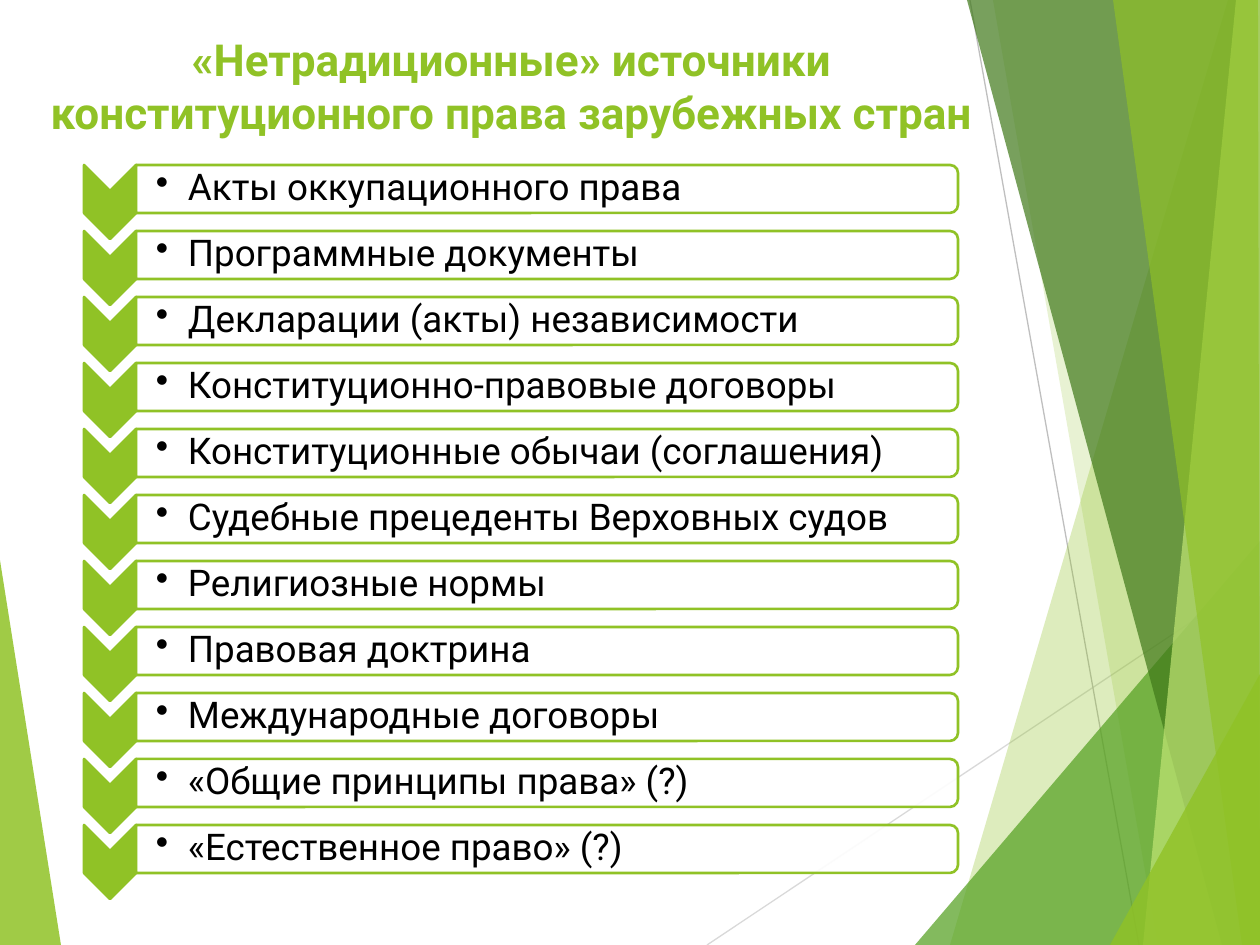
from lxml.etree import SubElement
from pptx import Presentation
from pptx.dml.color import RGBColor
from pptx.enum.shapes import MSO_CONNECTOR, MSO_SHAPE
from pptx.enum.text import MSO_ANCHOR, PP_ALIGN
from pptx.oxml.ns import qn
from pptx.util import Emu, Pt

SCALE = 914400 / 126
WIDTH, HEIGHT = 1260, 945
FONT = "Roboto"
GREEN = RGBColor(0x90, 0xC2, 0x26)
MID_GREEN = RGBColor(0x54, 0xA0, 0x21)
DARK_GREEN = RGBColor(0x3F, 0x78, 0x19)
PALE_GREEN = RGBColor(0xC0, 0xE4, 0x74)
LIGHT_GRAY = RGBColor(0xD9, 0xD9, 0xD9)
GRAY = RGBColor(0xBF, 0xBF, 0xBF)
WHITE = RGBColor(0xFF, 0xFF, 0xFF)
BLACK = RGBColor(0, 0, 0)


def px(*lengths):
    return [Emu(round(length * SCALE)) for length in lengths]


def paint(shape, color, opacity=100):
    shape.shadow.inherit = False
    shape.fill.solid()
    shape.fill.fore_color.rgb = color
    if opacity < 100:
        tint = shape.fill._xPr.find(".//" + qn("a:srgbClr"))
        SubElement(tint, qn("a:alpha"), val=str(opacity * 1000))


deck = Presentation()
deck.slide_width, deck.slide_height = px(WIDTH, HEIGHT)
page = deck.slides.add_slide(deck.slide_layouts[6])

# Thin background lines
for ends, color in [
    ((707, 945, 1260, 576), LIGHT_GRAY),
    ((970, 0, 1139, 945), GRAY),
]:
    line = page.shapes.add_connector(MSO_CONNECTOR.STRAIGHT, *px(*ends))
    line.line.color.rgb = color
    line.line.width = Pt(0.75)
    SubElement(line._element.spPr, qn("a:effectLst"))

# Translucent background facets
facets = [
    ([(0, 560), (61, 945), (0, 945)], GREEN, 85),
    ([(1228, 0), (950, 945), (1260, 945), (1260, 0)], GREEN, 30),
    ([(993, 0), (1158, 945), (1260, 945), (1260, 0)], GREEN, 20),
    ([(915, 945), (1260, 541), (1260, 945)], MID_GREEN, 72),
    ([(967, 0), (1222, 945), (1260, 945), (1260, 0)], DARK_GREEN, 70),
    ([(1236, 0), (1143, 945), (1260, 945), (1260, 0)], PALE_GREEN, 70),
    ([(1113, 0), (1242, 945), (1260, 945), (1258, 0)], GREEN, 65),
    ([(1110, 945), (1260, 674), (1260, 945)], GREEN, 80),
]
for points, color, opacity in facets:
    builder = page.shapes.build_freeform(*points[0], scale=SCALE)
    builder.add_line_segments(points[1:], close=True)
    facet = builder.convert_to_shape()
    paint(facet, color, opacity)
    facet.line.fill.background()

# Title
title = page.shapes.add_textbox(*px(25, 26, 973, 181))
title.text_frame.word_wrap = True
para = title.text_frame.paragraphs[0]
para.alignment = PP_ALIGN.CENTER
span = para.add_run()
span.text = "«Нетрадиционные» источники конституционного права зарубежных стран"
span.font.name, span.font.size, span.font.bold = FONT, Pt(25.2), True
span.font.color.rgb = GREEN

# Chevron list: one chevron, frame and bulleted label for each source of law
sources = [
    "Акты оккупационного права",
    "Программные документы",
    "Декларации (акты) независимости",
    "Конституционно-правовые договоры",
    "Конституционные обычаи (соглашения)",
    "Судебные прецеденты Верховных судов",
    "Религиозные нормы",
    "Правовая доктрина",
    "Международные договоры",
    "«Общие принципы права» (?)",
    "«Естественное право» (?)",
]
ROW_TOP, ROW_PITCH = 165, 66
for row, source in enumerate(sources):
    top = ROW_TOP + row * ROW_PITCH

    # Both shapes are turned a quarter, so they are placed by their centres
    for kind, center_x, center_y, width, height, color, opacity in [
        (MSO_SHAPE.CHEVRON, 110, top + 37, 74, 52, GREEN, 100),
        (MSO_SHAPE.ROUND_2_SAME_RECTANGLE, 547, top + 24, 48, 822, WHITE, 90),
    ]:
        shape = page.shapes.add_shape(
            kind, *px(center_x - width / 2, center_y - height / 2, width, height))
        shape.rotation = 90
        paint(shape, color, opacity)
        shape.line.color.rgb = GREEN
        shape.line.width = Pt(1.5)
        if kind == MSO_SHAPE.CHEVRON:
            shape.adjustments[0] = 0.5

    label = page.shapes.add_textbox(*px(136, top + 2, 819, 43))
    frame = label.text_frame
    frame.word_wrap = True
    frame.vertical_anchor = MSO_ANCHOR.MIDDLE
    (frame.margin_left, frame.margin_top,
     frame.margin_right, frame.margin_bottom) = px(20, 1, 1, 1)
    para = frame.paragraphs[0]
    para.line_spacing = 0.9
    para.space_after = Pt(3)
    indent = px(32)[0]
    props = para._p.get_or_add_pPr()
    props.set("marL", str(indent))
    props.set("indent", str(-indent))
    SubElement(props, qn("a:buChar"), char="•")
    span = para.add_run()
    span.text = source
    span.font.name, span.font.size = FONT, Pt(21)
    span.font.color.rgb = BLACK

deck.save("out.pptx")
